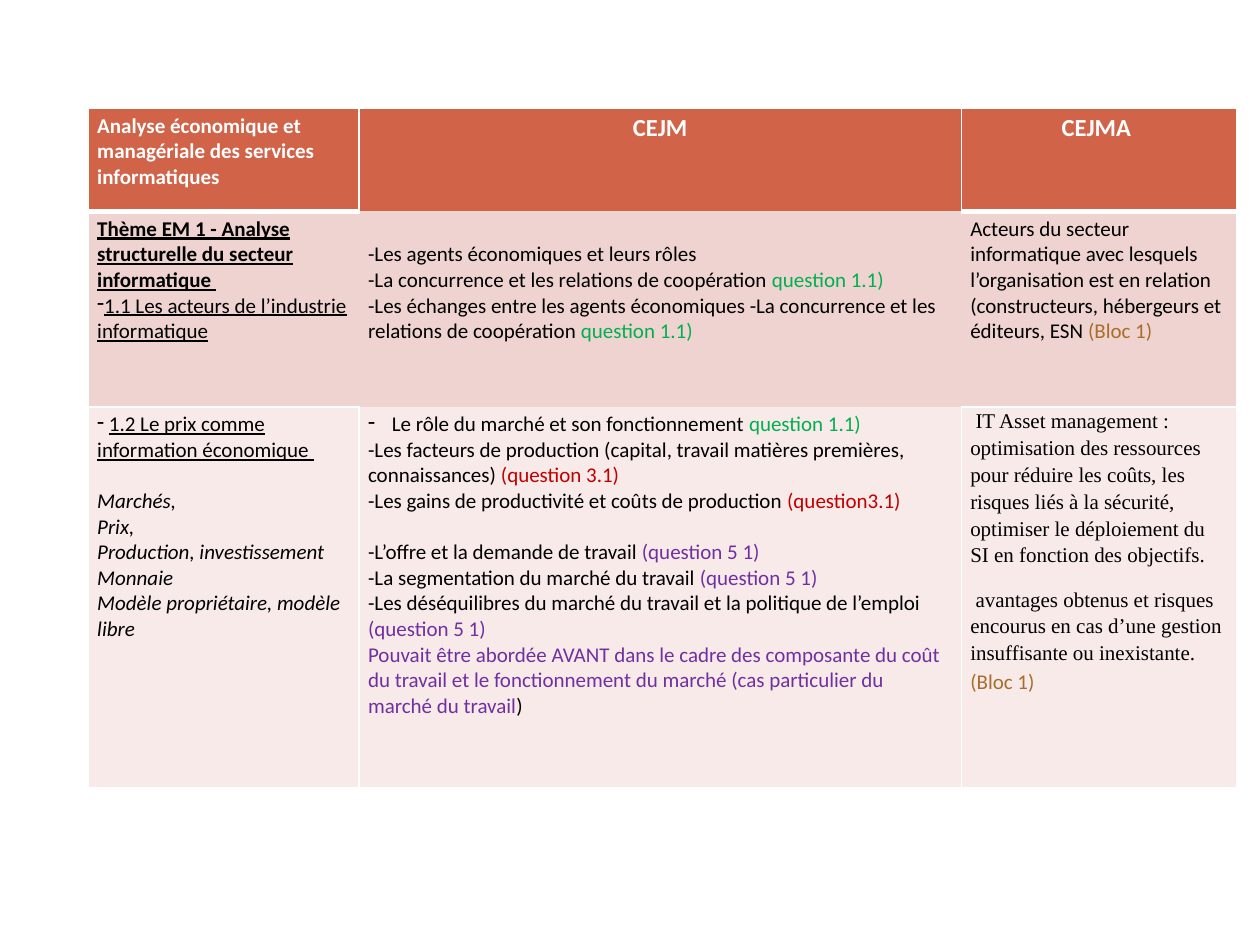
import pptx
import pptx.dml.color
import pptx.enum.text
import pptx.oxml
import pptx.oxml.ns
import pptx.util
from pptx.util import Cm, Pt

RGBColor = pptx.dml.color.RGBColor
WHITE = RGBColor(0xFF, 0xFF, 0xFF)
BLACK = RGBColor(0, 0, 0)
GREEN = RGBColor(0x00, 0xB0, 0x50)
RED = RGBColor(0xC0, 0x00, 0x00)
PURPLE = RGBColor(0x70, 0x30, 0xA0)
BROWN = RGBColor(0xA9, 0x6D, 0x2B)
ROW_FILLS = [RGBColor(0xD1, 0x63, 0x49), RGBColor(0xEE, 0xD3, 0xD0), RGBColor(0xF7, 0xEA, 0xE9)]

COLUMN_WIDTHS = [5.46, 12.14, 5.56]
ROW_HEIGHTS = [2.08, 3.94, 7.67]
LEFT, TOP = 1.78, 2.18
LINE = 14.65

HEADING = {"color": WHITE, "bold": True}
TITLE = {**HEADING, "size": 14}
THEME = {"bold": True, "underline": True}
TOPIC = {"underline": True}
NOTION = {"italic": True}
SERIF = {"font": "Times New Roman"}
Q1, Q3, Q5, BLOC = ({"color": color} for color in (GREEN, RED, PURPLE, BROWN))

CENTRED = {"centred": True}
DASH = {"indent": 0}
HANGING = {"indent": 0.48}
GAP = {"before": LINE}
SPACED = {"spacing": 1.15, "after": 10}

CONTENT = [
    [
        [({}, [("Analyse économique et managériale des services informatiques", HEADING)])],
        [(CENTRED, [("CEJM", TITLE)])],
        [(CENTRED, [("CEJMA ", TITLE)])],
    ],
    [
        [
            ({}, [("Thème EM 1 - Analyse structurelle du secteur informatique ", THEME)]),
            (DASH, [("1.1 Les acteurs de l’industrie informatique", TOPIC)]),
        ],
        [
            ({}, [("-Les agents économiques et leurs rôles", {})]),
            ({}, [("-La concurrence et les relations de coopération ", {}), ("question 1.1)", Q1)]),
            ({}, [("-Les échanges entre les agents économiques -La concurrence et les "
                   "relations de coopération ", {}), ("question 1.1)", Q1)]),
        ],
        [
            ({}, [("Acteurs du secteur informatique avec lesquels l’organisation est en relation "
                   "(constructeurs, hébergeurs et éditeurs, ESN ", {}), ("(Bloc 1)", BLOC)]),
        ],
    ],
    [
        [
            (DASH, [(" ", {}), ("1.2 Le prix comme information économique ", TOPIC)]),
            (GAP, [("Marchés,", NOTION)]),
            ({}, [("Prix,", NOTION)]),
            ({}, [("Production, investissement", NOTION)]),
            ({}, [("Monnaie", NOTION)]),
            ({}, [("Modèle propriétaire, modèle libre", NOTION)]),
        ],
        [
            (HANGING, [("Le rôle du marché et son fonctionnement ", {}), ("question 1.1)", Q1)]),
            ({}, [("-Les facteurs de production (capital, travail matières premières, "
                   "connaissances)", {}), (" (question 3.1)", Q3)]),
            ({}, [("-Les gains de productivité et coûts de production ", {}), ("(question3.1)", Q3)]),
            (GAP, [("-L’offre et la demande de travail ", {}), ("(question 5 1)", Q5)]),
            ({}, [("-La segmentation du marché du travail ", {}), ("(question 5 1)", Q5)]),
            ({}, [("-Les déséquilibres du marché du travail et la politique de l’emploi ", {}),
                  ("(question 5 1)", Q5)]),
            ({}, [("Pouvait être abordée AVANT dans le cadre des composante du coût du travail et le "
                   "fonctionnement du marché (cas particulier du marché du travail", Q5), (")", {})]),
        ],
        [
            (SPACED, [(" IT Asset management : optimisation des ressources pour réduire les coûts, "
                       "les risques liés à la sécurité, optimiser le déploiement du SI en fonction "
                       "des objectifs.", SERIF)]),
            (SPACED, [(" avantages obtenus et risques encourus en cas d’une gestion insuffisante "
                       "ou inexistante. ", SERIF), ("(Bloc 1)", BLOC)]),
        ],
    ],
]
BORDERS = [["ltrb", "ltr", "ltrb"], ["ltb", "", "trb"], ["ltrb", "lrb", "ltrb"]]
TOP_MARGINS = {(1, 1): Cm(0.1) + Pt(LINE), (2, 2): Cm(0)}
THICK_EDGES = [(0, "b"), (1, "t")]


def write_paragraph(paragraph, layout, runs):
    if "centred" in layout:
        paragraph.alignment = pptx.enum.text.PP_ALIGN.CENTER
    paragraph.space_before = Pt(layout.get("before", 0))
    paragraph.space_after = Pt(layout.get("after", 0))
    paragraph.line_spacing = layout.get("spacing", 1.0)
    if "indent" in layout:
        properties = paragraph._p.get_or_add_pPr()
        indent = Cm(layout["indent"])
        properties.set("marL", str(indent))
        properties.set("indent", str(-indent))
        bullet = pptx.oxml.parse_xml(f'<a:buChar {pptx.oxml.ns.nsdecls("a")} char="-"/>')
        properties.append(bullet)
    for text, style in runs:
        run = paragraph.add_run()
        run.text = text
        run.font.name = style.get("font", "Calibri")
        run.font.size = Pt(style.get("size", 12))
        run.font.color.rgb = style.get("color", BLACK)
        run.font.bold = style.get("bold", False)
        run.font.italic = style.get("italic", False)
        run.font.underline = style.get("underline", False)


def draw_borders(cell, row, sides):
    properties = cell._tc.get_or_add_tcPr()
    for position, side in enumerate("lrtb"):
        width = Pt(3 if (row, side) in THICK_EDGES else 1) if side in sides else 0
        paint = f'<a:solidFill><a:srgbClr val="{WHITE}"/></a:solidFill>' if side in sides else "<a:noFill/>"
        border = pptx.oxml.parse_xml(
            f'<a:ln{side.upper()} {pptx.oxml.ns.nsdecls("a")} w="{width}">{paint}</a:ln{side.upper()}>')
        properties.insert(position, border)


def main():
    deck = pptx.Presentation()
    deck.slide_width, deck.slide_height = Cm(25.4), Cm(19.05)
    slide = deck.slides.add_slide(deck.slide_layouts[6])
    programme = slide.shapes.add_table(
        len(ROW_HEIGHTS), len(COLUMN_WIDTHS), Cm(LEFT), Cm(TOP),
        Cm(sum(COLUMN_WIDTHS)), Cm(sum(ROW_HEIGHTS))).table
    programme.first_row = programme.horz_banding = False
    for column, width in zip(programme.columns, COLUMN_WIDTHS):
        column.width = Cm(width)
    for r, height in enumerate(ROW_HEIGHTS):
        programme.rows[r].height = Cm(height)
        for c, paragraphs in enumerate(CONTENT[r]):
            cell = programme.cell(r, c)
            cell.margin_left = cell.margin_right = Cm(0.18)
            cell.margin_top = TOP_MARGINS.get((r, c), Cm(0.1))
            cell.margin_bottom = Cm(0.1)
            cell.fill.solid()
            cell.fill.fore_color.rgb = ROW_FILLS[r]
            draw_borders(cell, r, BORDERS[r][c])
            for number, (layout, runs) in enumerate(paragraphs):
                frame = cell.text_frame
                paragraph = frame.add_paragraph() if number else frame.paragraphs[0]
                write_paragraph(paragraph, layout, runs)
    deck.save("out.pptx")


if __name__ == "__main__":
    main()
